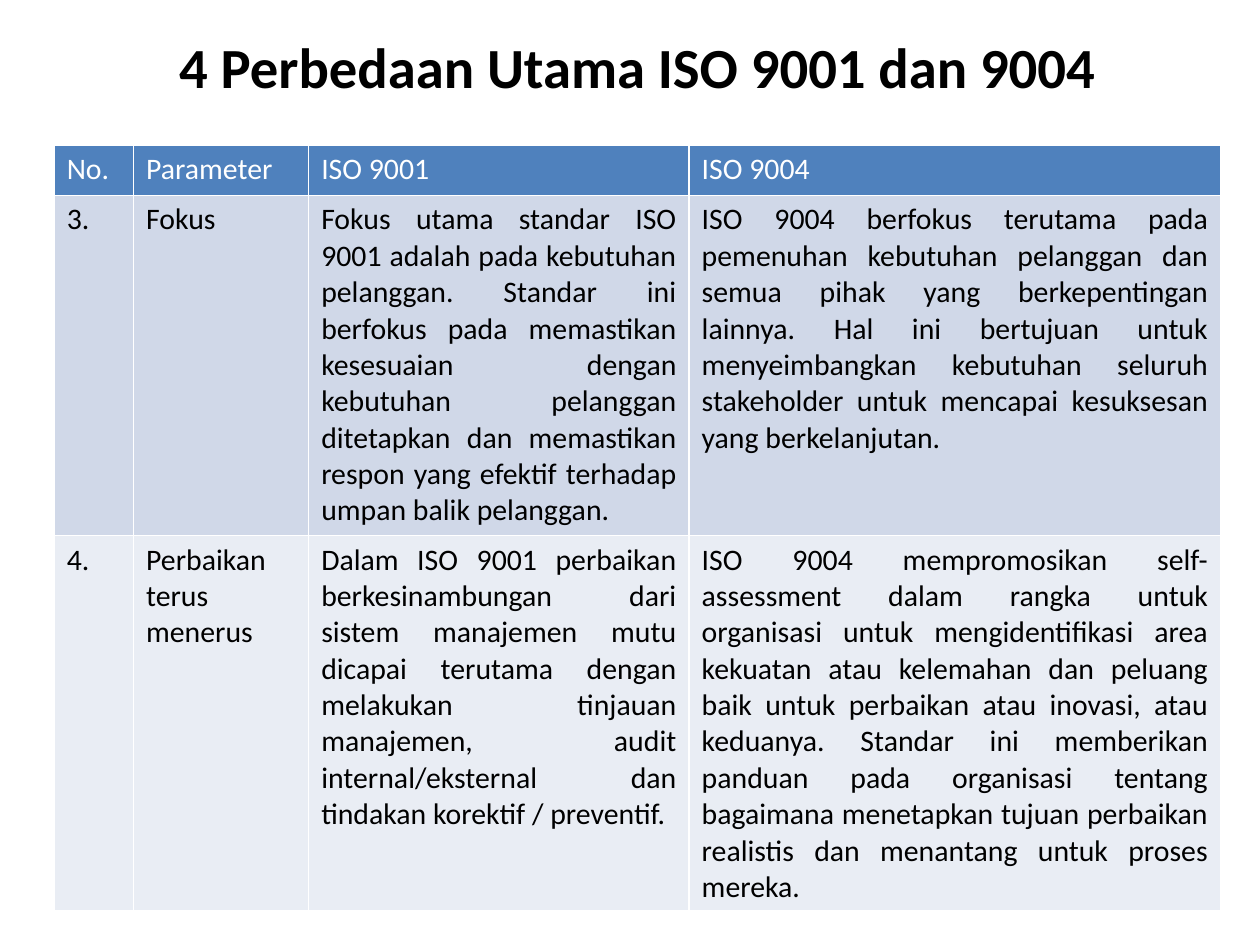
from lxml.etree import SubElement as Sub
from pptx import Presentation
from pptx.dml.color import RGBColor as Rgb
from pptx.enum.text import MSO_ANCHOR as Anchor, PP_ALIGN as Align
from pptx.oxml.ns import qn
from pptx.util import Inches, Pt

TITLE = "4 Perbedaan Utama ISO 9001 dan 9004"
ROWS = [
    ("No.", "Parameter", "ISO 9001", "ISO 9004"),
    (
        "3.",
        "Fokus",
        "Fokus utama standar ISO 9001 adalah pada kebutuhan pelanggan. "
        "Standar ini berfokus pada memastikan kesesuaian dengan kebutuhan "
        "pelanggan ditetapkan dan memastikan respon yang efektif terhadap "
        "umpan balik pelanggan.",
        "ISO 9004 berfokus terutama pada pemenuhan kebutuhan pelanggan dan "
        "semua pihak yang berkepentingan lainnya. Hal ini bertujuan untuk "
        "menyeimbangkan kebutuhan seluruh stakeholder untuk mencapai "
        "kesuksesan yang berkelanjutan.",
    ),
    (
        "4.",
        "Perbaikan terus menerus",
        "Dalam ISO 9001 perbaikan berkesinambungan dari sistem manajemen "
        "mutu dicapai terutama dengan melakukan tinjauan manajemen, audit "
        "internal/eksternal dan tindakan korektif / preventif.",
        "ISO 9004 mempromosikan self-assessment dalam rangka untuk organisasi "
        "untuk mengidentifikasi area kekuatan atau kelemahan dan peluang baik "
        "untuk perbaikan atau inovasi, atau keduanya. Standar ini memberikan "
        "panduan pada organisasi tentang bagaimana menetapkan tujuan perbaikan "
        "realistis dan menantang untuk proses mereka.",
    ),
]
WIDTHS = [0.63, 1.39, 3.02, 4.22]
HEIGHTS = [0.4, 2.7, 2.98]

BLACK = Rgb(0, 0, 0)
WHITE = Rgb(255, 255, 255)
BLUE = Rgb(0x4F, 0x81, 0xBD)
DARK = Rgb(0xD0, 0xD8, 0xE8)
PALE = Rgb(0xE9, 0xED, 0xF4)
FILLS = [BLUE, DARK, PALE]

HEAD = {"name": "Calibri", "size": Pt(32.4), "bold": True}
BODY = {"name": "Calibri", "size": Pt(17), "bold": False}


def style(para, form, color, align):
    para.alignment = align
    for key, value in form.items():
        setattr(para.font, key, value)
    para.font.color.rgb = color


def border(cell):
    props = cell._tc.get_or_add_tcPr()
    for side in "LRTB":
        line = Sub(props, qn("a:ln" + side), w=str(Pt(1)))
        fill = Sub(line, qn("a:solidFill"))
        Sub(fill, qn("a:srgbClr"), val=str(WHITE))


def add_title(slide):
    box = slide.shapes.add_textbox(
        Inches(0.61), Inches(0.21), Inches(8.9), Inches(0.63))
    frame = box.text_frame
    frame.word_wrap = True
    frame.vertical_anchor = Anchor.MIDDLE
    frame.text = TITLE
    style(frame.paragraphs[0], HEAD, BLACK, Align.CENTER)


def add_grid(slide):
    table = slide.shapes.add_table(
        len(ROWS), len(WIDTHS), Inches(0.43), Inches(1.15),
        Inches(sum(WIDTHS)), Inches(sum(HEIGHTS))).table
    for col, width in zip(table.columns, WIDTHS):
        col.width = Inches(width)
    for r, texts in enumerate(ROWS):
        table.rows[r].height = Inches(HEIGHTS[r])
        for c, text in enumerate(texts):
            cell = table.cell(r, c)
            cell.text = text
            border(cell)
            cell.fill.solid()
            cell.fill.fore_color.rgb = FILLS[r]
            align = Align.JUSTIFY if r and c > 1 else Align.LEFT
            color = BLACK if r else WHITE
            style(cell.text_frame.paragraphs[0], BODY, color, align)


def main():
    deck = Presentation()
    deck.slide_width, deck.slide_height = Inches(10), Inches(7.5)
    slide = deck.slides.add_slide(deck.slide_layouts[6])
    add_title(slide)
    add_grid(slide)
    deck.save("out.pptx")


if __name__ == "__main__":
    main()
